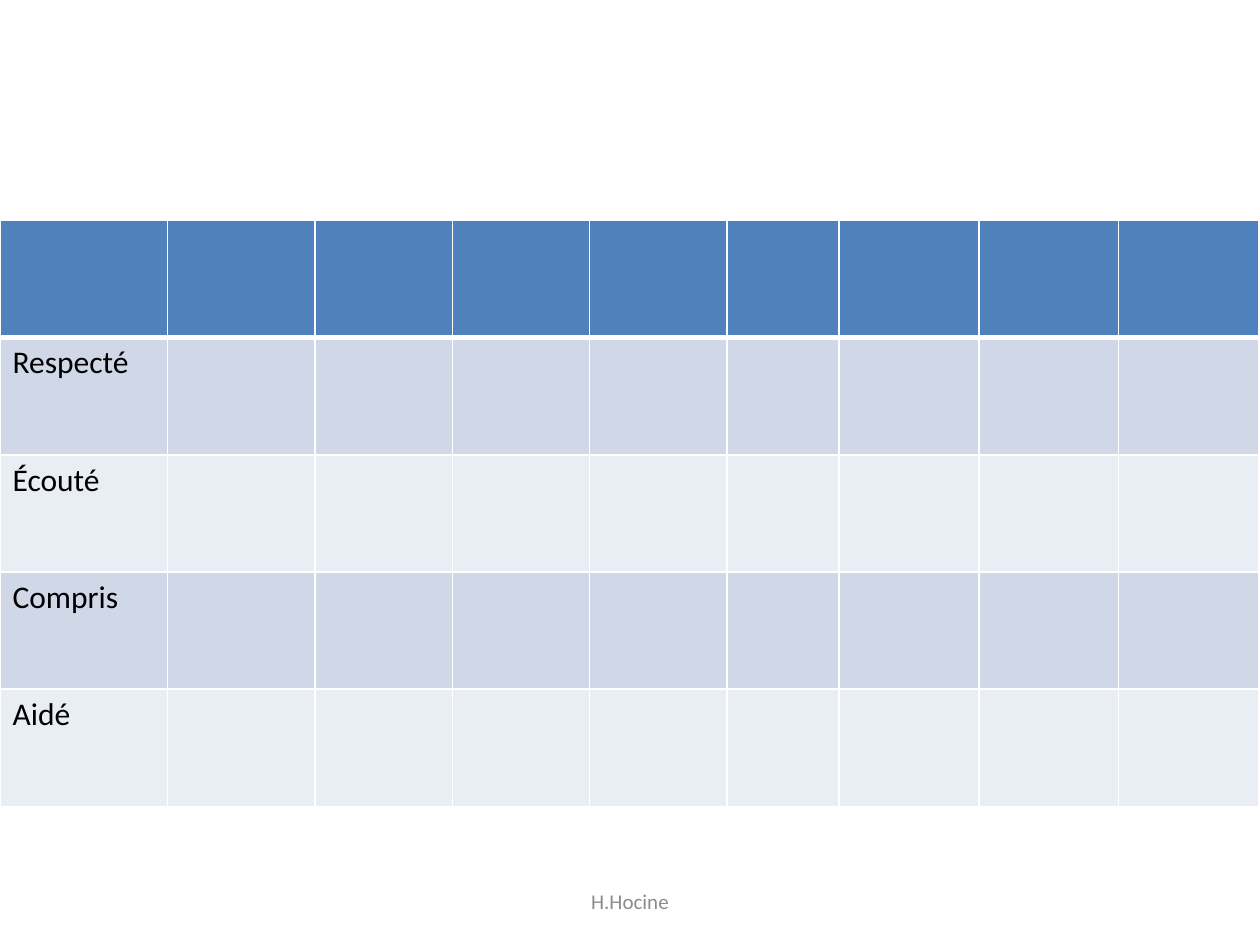
from lxml import etree
from pptx import Presentation
from pptx.dml.color import RGBColor
from pptx.enum.text import MSO_ANCHOR, PP_ALIGN
from pptx.oxml.ns import qn
from pptx.util import Inches, Pt

CENTER = PP_ALIGN.CENTER
MIDDLE = MSO_ANCHOR.MIDDLE

WIDTH, HEIGHT = 10, 7.5
FONT = "Calibri"
HEADER, BANDS = "4F81BD", ("D0D8E8", "E9EDF4")
WHITE, BLACK, GREY = "FFFFFF", "000000", "8C8C8C"

ROW_LABELS = ["", "Respecté", "Écouté", "Compris", "Aidé"]
COLUMN_WIDTHS = [1.33, 1.17] + [1.09] * 3 + [0.89] + [1.11] * 3
TABLE_TOP, ROW_HEIGHT = 1.75, 0.93


def color(hex_value):
    return RGBColor.from_string(hex_value)


def style_text(para, size, hex_value):
    for span in para.runs:
        span.font.name = FONT
        span.font.size = Pt(size)
        span.font.bold = False
        span.font.color.rgb = color(hex_value)


def set_borders(cell, bottom_width):
    """Draw white cell borders; call before the fill is set."""
    properties = cell._tc.get_or_add_tcPr()
    widths = {"a:lnL": 1, "a:lnR": 1, "a:lnT": 1, "a:lnB": bottom_width}
    for side, width in widths.items():
        line = etree.SubElement(properties, qn(side), w=str(Pt(width)))
        fill = etree.SubElement(line, qn("a:solidFill"))
        etree.SubElement(fill, qn("a:srgbClr"), val=WHITE)


def add_feelings_table(page):
    frame = page.shapes.add_table(
        len(ROW_LABELS), len(COLUMN_WIDTHS), 0, Inches(TABLE_TOP),
        Inches(WIDTH), Inches(ROW_HEIGHT * len(ROW_LABELS)))
    table = frame.table
    for column, width in zip(table.columns, COLUMN_WIDTHS):
        column.width = Inches(width)

    for index, (row, label) in enumerate(zip(table.rows, ROW_LABELS)):
        row.height = Inches(ROW_HEIGHT)
        is_header = index == 0
        for cell in row.cells:
            set_borders(cell, 3 if is_header else 1)
            cell.fill.solid()
            cell.fill.fore_color.rgb = color(HEADER if is_header else BANDS[(index - 1) % 2])
        if label:
            first = row.cells[0]
            first.text_frame.text = label
            style_text(first.text_frame.paragraphs[0], 18, BLACK)


def add_footer(page, text):
    width, height = 3.17, 0.4
    box = page.shapes.add_textbox(
        Inches((WIDTH - width) / 2), Inches(6.95), Inches(width), Inches(height))
    frame = box.text_frame
    frame.word_wrap = True
    frame.vertical_anchor = MIDDLE
    frame.text = text
    para = frame.paragraphs[0]
    para.alignment = CENTER
    style_text(para, 12, GREY)


def main():
    deck = Presentation()
    deck.slide_width, deck.slide_height = Inches(WIDTH), Inches(HEIGHT)
    page = deck.slides.add_slide(deck.slide_layouts[6])

    # Table with one row per feeling
    add_feelings_table(page)

    # Footer
    add_footer(page, "H.Hocine")

    deck.save("out.pptx")


if __name__ == "__main__":
    main()
